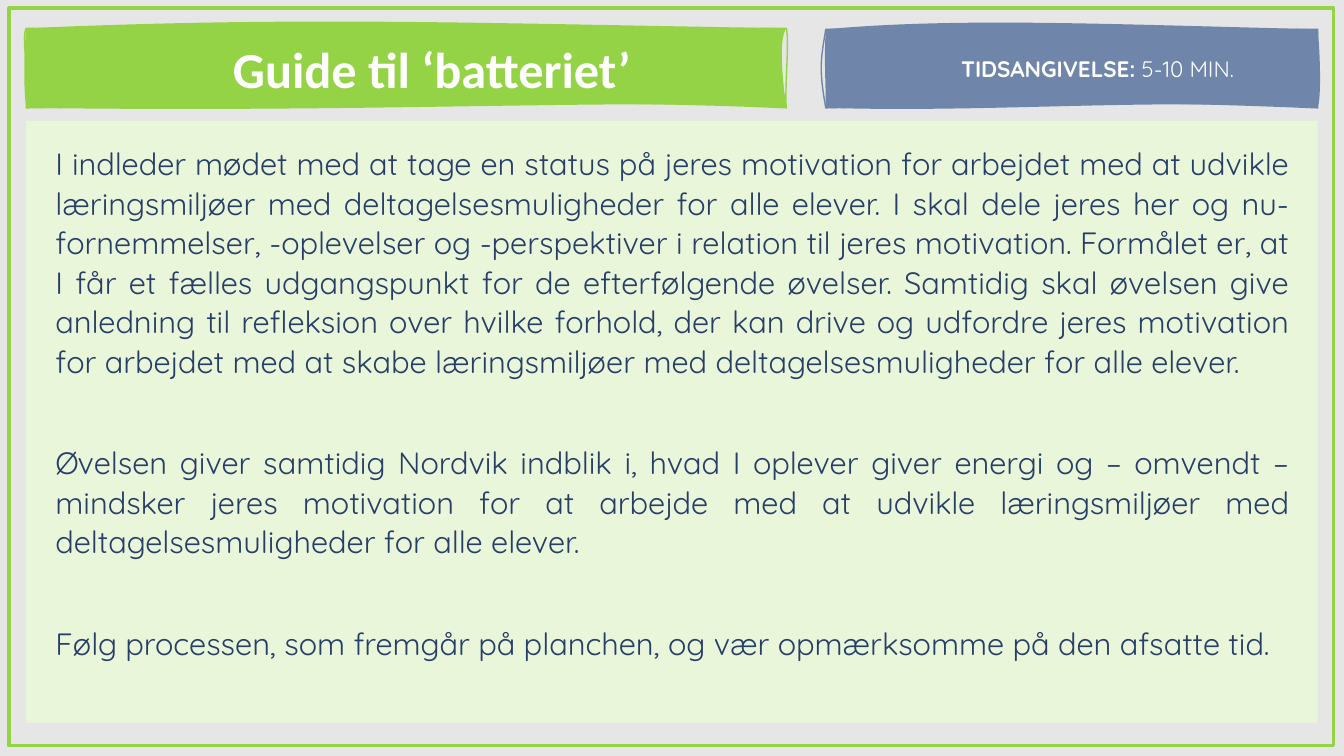
from lxml import etree
from pptx import Presentation
from pptx.dml.color import RGBColor
from pptx.enum.shapes import MSO_SHAPE as Preset
from pptx.enum.text import MSO_ANCHOR as Anchor, PP_ALIGN as Align
from pptx.oxml.ns import qn
from pptx.util import Inches, Pt

THEME = {
    "back": "E6E6E6", "green": "95D346", "blue": "7085AA",
    "pale": "EAF6DA", "ink": "273F68", "white": "FFFFFF",
    "title": 36, "time": 16, "body": 22,
    "title_font": "Calibri", "body_font": "Quicksand",
}

FRAME = (0.09, 0.08, 13.14, 7.32)
PANEL = (0.26, 1.2, 12.81, 5.97)
BODY = (0.47, 1.41, 12.4, 5.56)

PARAGRAPHS = [
    "I indleder mødet med at tage en status på jeres motivation for arbejdet med at udvikle "
    "læringsmiljøer med deltagelsesmuligheder for alle elever. I skal dele jeres her og "
    "nu-fornemmelser, -oplevelser og -perspektiver i relation til jeres motivation. Formålet er, "
    "at I får et fælles udgangspunkt for de efterfølgende øvelser. Samtidig skal øvelsen give "
    "anledning til refleksion over hvilke forhold, der kan drive og udfordre jeres motivation "
    "for arbejdet med at skabe læringsmiljøer med deltagelsesmuligheder for alle elever.",
    "Øvelsen giver samtidig Nordvik indblik i, hvad I oplever giver energi og – omvendt – "
    "mindsker jeres motivation for at arbejde med at udvikle læringsmiljøer med "
    "deltagelsesmuligheder for alle elever.",
    "Følg processen, som fremgår på planchen, og vær opmærksomme på den afsatte tid.",
]

BANNERS = [
    {
        "at": (0.26, 0.28, 7.54, 0.79), "color": "green", "size": "title", "font": "title_font",
        "runs": [("Guide til ‘batteriet’", True)],
        "outline": [(1.54, 0.32, 6.85, 0.29, 7.8, 0.28), (7.83, 0.43, 7.78, 0.91, 7.8, 1.07),
                    (5.75, 0.97, 2.86, 1.03, 0.26, 1.07), (0.32, 0.81, 0.2, 0.4, 0.26, 0.28)],
        "body": [(3.01, 0.16, 4.67, 0.23, 7.8, 0.28), (7.73, 0.37, 7.75, 0.71, 7.8, 1.07),
                 (6.32, 0.97, 3.93, 1.12, 0.26, 1.07), (0.24, 0.95, 0.23, 0.61, 0.26, 0.28)],
    },
    {
        "at": (8.19, 0.29, 4.88, 0.78), "color": "blue", "size": "time", "font": "body_font",
        "runs": [("TIDSANGIVELSE:", True), (" 5-10 MIN.", False)],
        "outline": [(10.19, 0.33, 11.86, 0.3, 13.07, 0.29), (13.07, 0.43, 13, 0.87, 13.07, 1.07),
                    (10.81, 0.97, 9.66, 1.03, 8.19, 1.07), (8.12, 0.68, 8.14, 0.59, 8.19, 0.29)],
        "body": [(9.51, 0.17, 10.99, 0.24, 13.07, 0.29), (13.1, 0.64, 13.1, 0.97, 13.07, 1.07),
                 (11.39, 0.97, 9.87, 1.12, 8.19, 1.07), (8.19, 0.78, 8.17, 0.59, 8.19, 0.29)],
    },
]


def color(name):
    return RGBColor.from_string(THEME[name])


def style(span, size, font, ink, bold=False):
    span.font.size = Pt(THEME[size])
    span.font.name = THEME[font]
    span.font.color.rgb = color(ink)
    span.font.bold = bold


def set_insets(frame, left, top, right, bottom):
    frame.margin_left, frame.margin_top = Inches(left), Inches(top)
    frame.margin_right, frame.margin_bottom = Inches(right), Inches(bottom)
    frame.word_wrap = True


def add_rectangle(slide, at, fill=None, line=None):
    box = slide.shapes.add_shape(Preset.RECTANGLE, *map(Inches, at))
    box.shadow.inherit = False
    if fill:
        box.fill.solid()
        box.fill.fore_color.rgb = color(fill)
    else:
        box.fill.background()
    if line:
        box.line.color.rgb = color(line)
        box.line.width = Pt(2.25)
    else:
        box.line.fill.background()


def add_curves(outlines, at, curves, **flags):
    left, top, width, height = at
    outline = etree.SubElement(outlines, qn("a:path"), w=str(Inches(width)),
                               h=str(Inches(height)), **flags)

    def add_point(step, x, y):
        etree.SubElement(step, qn("a:pt"), x=str(Inches(x - left)), y=str(Inches(y - top)))

    add_point(etree.SubElement(outline, qn("a:moveTo")), left, top)
    for curve in curves:
        step = etree.SubElement(outline, qn("a:cubicBezTo"))
        for x, y in zip(curve[::2], curve[1::2]):
            add_point(step, x, y)
    etree.SubElement(outline, qn("a:close"))


def add_banner(slide, banner):
    left, top, width, height = banner["at"]
    right, bottom = left + width, top + height
    builder = slide.shapes.build_freeform(Inches(left), Inches(top))
    corners = [(right, top), (right, bottom), (left, bottom)]
    builder.add_line_segments([(Inches(x), Inches(y)) for x, y in corners])
    box = builder.convert_to_shape()
    outlines = box.element.spPr.find(".//" + qn("a:pathLst"))
    for old in list(outlines):
        outlines.remove(old)
    add_curves(outlines, banner["at"], banner["outline"], fill="none")
    add_curves(outlines, banner["at"], banner["body"], stroke="0")
    box.shadow.inherit = False
    box.fill.solid()
    box.fill.fore_color.rgb = color(banner["color"])
    box.line.color.rgb = color(banner["color"])
    box.line.width = Pt(1)
    frame = box.text_frame
    set_insets(frame, 0.59, 0.04, 0.08, 0.04)
    frame.vertical_anchor = Anchor.MIDDLE
    para = frame.paragraphs[0]
    para.alignment = Align.CENTER
    for text, bold in banner["runs"]:
        span = para.add_run()
        span.text = text
        style(span, banner["size"], banner["font"], "white", bold)


def add_body(slide):
    frame = slide.shapes.add_textbox(*map(Inches, BODY)).text_frame
    set_insets(frame, 0.08, 0, 0.08, 0.04)
    frame.vertical_anchor = Anchor.TOP
    frame.text = "\n".join(PARAGRAPHS)
    for index, para in enumerate(frame.paragraphs):
        para.alignment = Align.JUSTIFY
        para.line_spacing = Pt(28.3)
        para.space_before = Pt(36 if index else 0)
        para.space_after = Pt(8)
        style(para.runs[0], "body", "body_font", "ink")


def main():
    deck = Presentation()
    deck.slide_width, deck.slide_height = Inches(13.33), Inches(7.5)
    slide = deck.slides.add_slide(deck.slide_layouts[6])
    slide.background.fill.solid()
    slide.background.fill.fore_color.rgb = color("back")
    add_rectangle(slide, FRAME, line="green")
    for banner in BANNERS:
        add_banner(slide, banner)
    add_rectangle(slide, PANEL, fill="pale")
    add_body(slide)
    deck.save("out.pptx")


if __name__ == "__main__":
    main()
